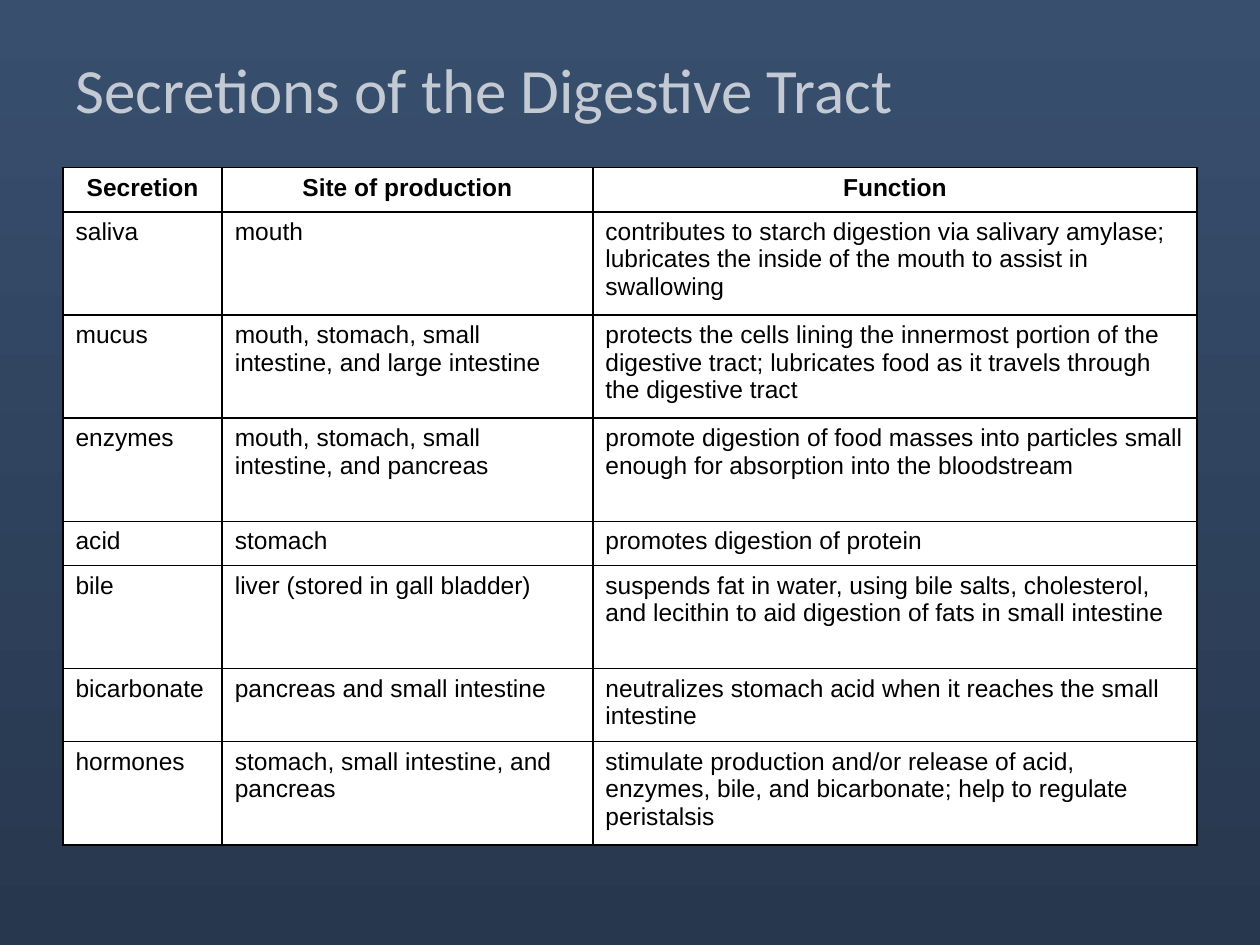
from dataclasses import dataclass

from lxml import etree
from pptx import Presentation
from pptx.dml.color import RGBColor
from pptx.enum.text import MSO_ANCHOR, PP_ALIGN
from pptx.oxml.ns import qn
from pptx.util import Cm, Pt

BOTTOM = MSO_ANCHOR.BOTTOM
CENTER, LEFT = PP_ALIGN.CENTER, PP_ALIGN.LEFT


@dataclass(frozen=True)
class Theme:
    sky: str = "384F6E"
    deep: str = "27374E"
    title: str = "C4CAD3"
    ink: str = "000000"
    paper: str = "FFFFFF"
    title_font: str = "Calibri"
    body_font: str = "Arial"
    title_size: int = 36
    body_size: int = 14
    border_width: int = 1


THEME = Theme()

COLUMN_WIDTHS = [3.21, 7.47, 12.18]
ROWS = [
    (0.89, "Secretion", "Site of production", "Function"),
    (2.08, "saliva", "mouth",
     "contributes to starch digestion via salivary amylase; "
     "lubricates the inside of the mouth to assist in swallowing"),
    (2.08, "mucus", "mouth, stomach, small intestine, and large intestine",
     "protects the cells lining the innermost portion of the digestive tract; "
     "lubricates food as it travels through the digestive tract"),
    (2.08, "enzymes", "mouth, stomach, small intestine, and pancreas",
     "promote digestion of food masses into particles small enough "
     "for absorption into the bloodstream"),
    (0.89, "acid", "stomach", "promotes digestion of protein"),
    (2.08, "bile", "liver (stored in gall bladder)",
     "suspends fat in water, using bile salts, cholesterol, and lecithin "
     "to aid digestion of fats in small intestine"),
    (1.47, "bicarbonate", "pancreas and small intestine",
     "neutralizes stomach acid when it reaches the small intestine"),
    (2.08, "hormones", "stomach, small intestine, and pancreas",
     "stimulate production and/or release of acid, enzymes, bile, "
     "and bicarbonate; help to regulate peristalsis"),
]


def style(paragraph, name, size, color, bold=False):
    font = paragraph.font
    font.name, font.size, font.bold = name, Pt(size), bold
    font.color.rgb = RGBColor.from_string(color)


def add_borders(cell):
    properties = cell._tc.get_or_add_tcPr()
    for position, side in enumerate(("a:lnL", "a:lnR", "a:lnT", "a:lnB")):
        line = etree.Element(qn(side), w=str(Pt(THEME.border_width)))
        fill = etree.SubElement(line, qn("a:solidFill"))
        etree.SubElement(fill, qn("a:srgbClr"), val=THEME.ink)
        properties.insert(position, line)


prs = Presentation()
prs.slide_width, prs.slide_height = Cm(25.4), Cm(19.05)
slide = prs.slides.add_slide(prs.slide_layouts[6])

# Background, darkening downwards
backdrop = slide.background.fill
backdrop.gradient()
backdrop.gradient_angle = 270
for stop, color in zip(backdrop.gradient_stops, (THEME.sky, THEME.deep)):
    stop.color.rgb = RGBColor.from_string(color)

# Title
title = slide.shapes.add_textbox(Cm(1.27), Cm(0.76), Cm(22.86), Cm(1.78)).text_frame
title.word_wrap = True
title.vertical_anchor = BOTTOM
title.margin_top = title.margin_bottom = 0
title.text = "Secretions of the Digestive Tract"
style(title.paragraphs[0], THEME.title_font, THEME.title_size, THEME.title)

# Table of secretions
secretions = slide.shapes.add_table(
    len(ROWS), len(COLUMN_WIDTHS), Cm(1.27), Cm(3.38),
    Cm(sum(COLUMN_WIDTHS)), Cm(sum(row[0] for row in ROWS))).table
secretions.horz_banding = False
for column, width in zip(secretions.columns, COLUMN_WIDTHS):
    column.width = Cm(width)

for r, (height, *entries) in enumerate(ROWS):
    secretions.rows[r].height = Cm(height)
    is_header = r == 0
    for c, entry in enumerate(entries):
        cell = secretions.cell(r, c)
        cell.text = entry
        cell.fill.solid()
        cell.fill.fore_color.rgb = RGBColor.from_string(THEME.paper)
        add_borders(cell)
        paragraph = cell.text_frame.paragraphs[0]
        paragraph.alignment = CENTER if is_header else LEFT
        style(paragraph, THEME.body_font, THEME.body_size, THEME.ink, is_header)

prs.save("out.pptx")
